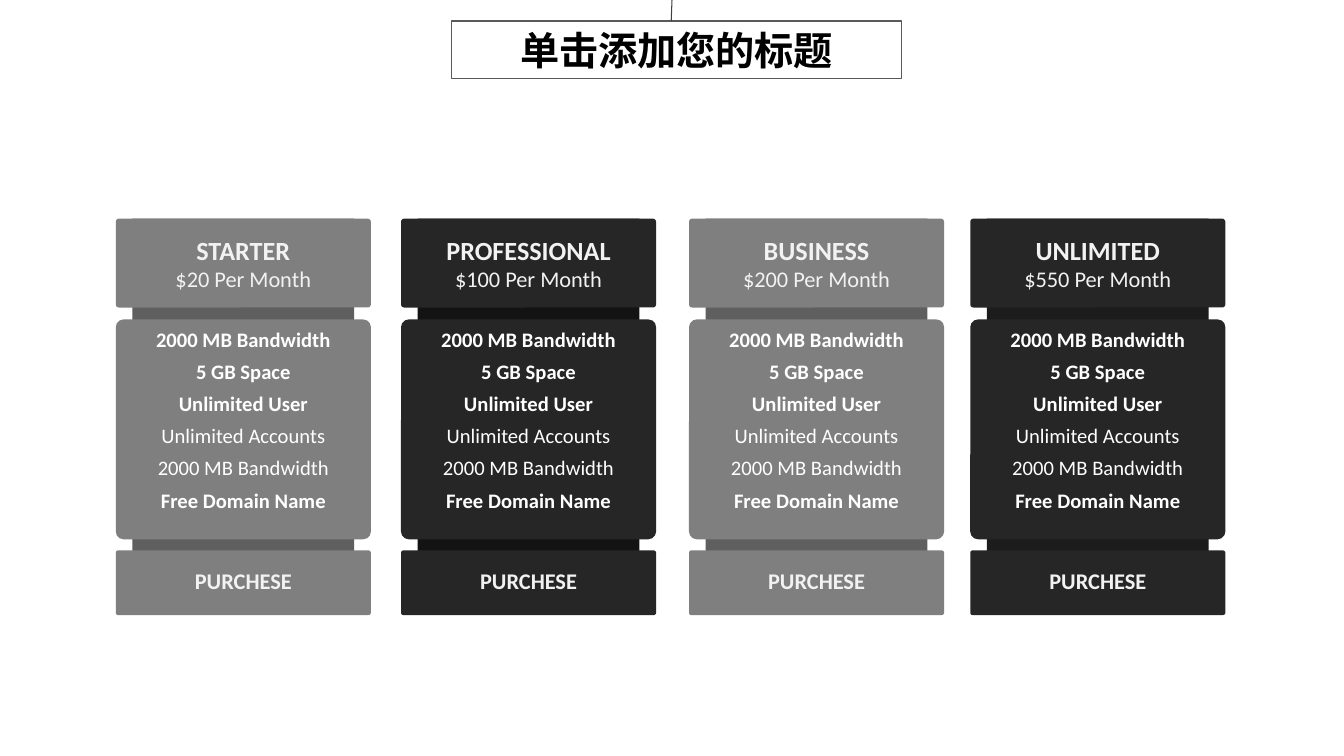
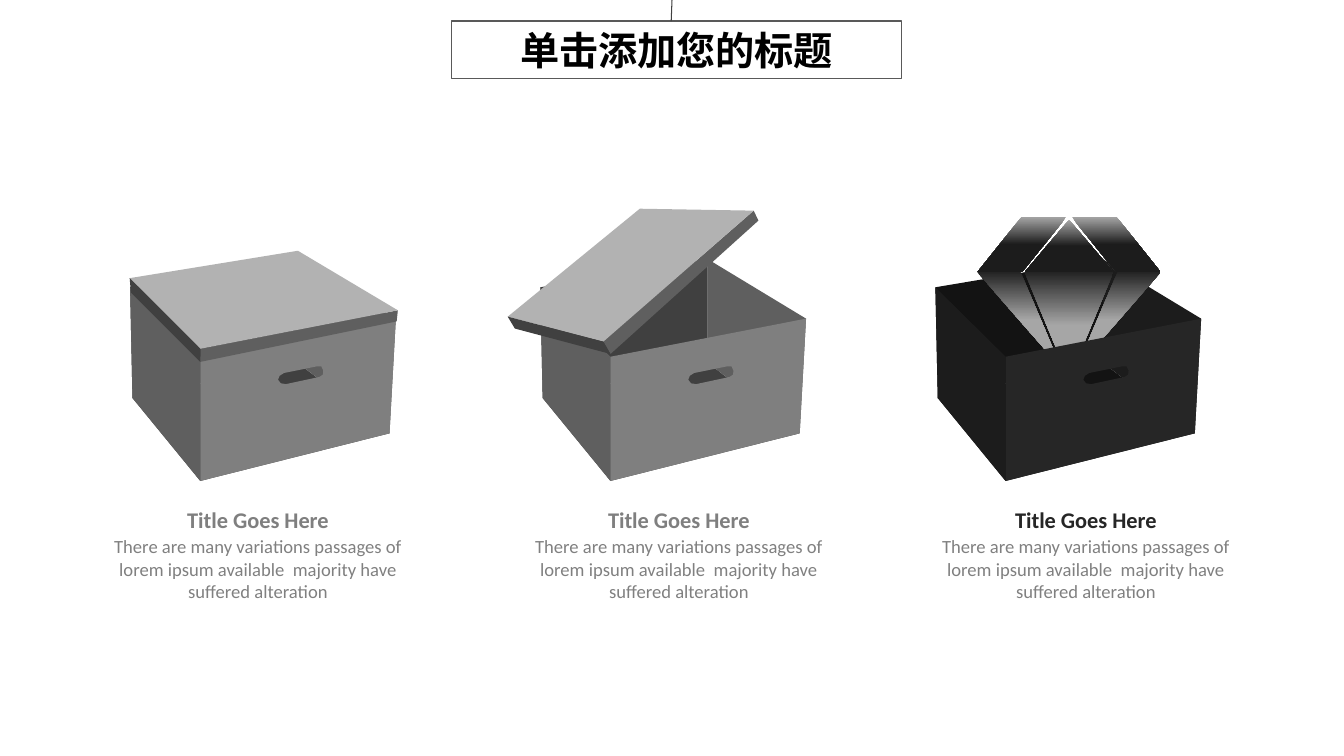
from dataclasses import dataclass

from lxml.etree import SubElement
from pptx import Presentation
from pptx.dml.color import RGBColor as RGB
from pptx.enum.shapes import MSO_CONNECTOR as LINK, MSO_SHAPE as SHAPE
from pptx.enum.text import MSO_ANCHOR as ANCHOR, PP_ALIGN as ALIGN
from pptx.oxml.ns import qn
from pptx.util import Cm, Pt


@dataclass(frozen=True)
class Theme:
    """Colours and type sizes shared by both slides."""
    font: str = "Calibri"
    black: str = "000000"
    white: str = "FFFFFF"
    pale: str = "F2F2F2"
    body: str = "808080"
    lid: str = "B2B2B2"
    frame: str = "595959"
    stem: str = "404040"
    grey: tuple = ("7F7F7F", "5F5F5F", "404040")
    dark: tuple = ("262626", "1C1C1C", "131313")
    crown: tuple = ("A6A6A6", "1C1C1C")
    pavilion: tuple = ("242424", "A6A6A6")
    title_pt: float = 28
    plan_pt: float = 18.7
    label_pt: float = 16
    feature_pt: float = 14.7
    body_pt: float = 13.3


T = Theme()
TITLE = "单击添加您的标题"

COL_W, TOP = 6.43, 5.51
PLANS = [
    (2.92, "STARTER", "$20 Per Month", T.grey[0], T.grey[1]),
    (10.11, "PROFESSIONAL", "$100 Per Month", T.dark[0], T.dark[2]),
    (17.37, "BUSINESS", "$200 Per Month", T.grey[0], T.grey[1]),
    (24.46, "UNLIMITED", "$550 Per Month", T.dark[0], T.dark[1]),
]
FEATURES = [
    ("2000 MB Bandwidth", True),
    ("5 GB Space", True),
    ("Unlimited User", True),
    ("Unlimited Accounts", False),
    ("2000 MB Bandwidth", False),
    ("Free Domain Name", True),
]

CAPTION = "Title Goes Here"
BLURB = ("There are many variations passages of lorem ipsum available  "
         "majority have suffered alteration")
CAPTION_W = 8.43

BACK_TOP, BACK_LOW = (2.45, 6.53), (2.45, 9.14)
LEFT_TOP, LEFT_LOW = (-1.77, 7.24), (-1.71, 10.03)
FRONT_TOP, FRONT_LOW = (0, 8.99), (0, 12.12)
RIGHT_TOP, RIGHT_LOW = (4.93, 8.03), (4.77, 10.92)
HANDLE = [(3.05, 9.23), (2.95, 9.23), (2.11, 9.4), (2, 9.47), (1.96, 9.57),
          (2.03, 9.66), (2.16, 9.68), (3, 9.5), (3.09, 9.44), (3.1, 9.34)]
CLOSED_LID = [(2.46, 6.32), (4.98, 7.82), (0, 8.79), (-1.78, 7.01),
              (4.95, 8.1), (0, 9.12), (-1.75, 7.37)]
OPEN_LID = [(0.74, 5.26), (3.61, 5.31), (-0.18, 8.61), (-2.59, 7.98),
            (3.73, 5.56), (0, 8.92), (-2.41, 8.28)]

CROWN_SIDE = [(0.18, 5.61), (0.08, 5.46), (1.19, 5.46), (2.31, 6.86), (1.19, 6.86)]
CROWN_MIDDLE = [(-1.12, 6.86), (1.12, 6.86), (0, 5.54)]
PAVILION_SIDE = [(2.31, 6.86), (0.2, 9.27), (1.22, 6.86)]
PAVILION_MIDDLE = [(-1.12, 6.86), (1.12, 6.86), (0, 9.55)]


def paint(sp, fill=None, line=None):
    """Give a shape a flat fill and outline, or none, and no shadow."""
    sp.shadow.inherit = False
    if fill:
        sp.fill.solid()
        sp.fill.fore_color.rgb = RGB.from_string(fill)
    else:
        sp.fill.background()
    if line:
        sp.line.color.rgb = RGB.from_string(line)
        sp.line.width = Pt(0.75)
    else:
        sp.line.fill.background()
    return sp


def write(sp, lines, color, anchor=ANCHOR.MIDDLE, top=0, bottom=0, gap=0):
    """Write centred (text, size, bold) lines into a shape."""
    tf = sp.text_frame
    tf.word_wrap = True
    tf.vertical_anchor = anchor
    tf.margin_left = tf.margin_right = 0
    tf.margin_top, tf.margin_bottom = Cm(top), Cm(bottom)
    for i, (text, size, bold) in enumerate(lines):
        p = tf.add_paragraph() if i else tf.paragraphs[0]
        p.text = text
        p.alignment = ALIGN.CENTER
        p.space_before = Pt(gap if i else 0)
        p.font.name = T.font
        p.font.size = Pt(size)
        p.font.bold = bold
        p.font.color.rgb = RGB.from_string(color)


def block(s, kind, x, y, w, h, fill=None, line=None):
    """Add a preset shape measured in centimetres."""
    return paint(s.shapes.add_shape(kind, Cm(x), Cm(y), Cm(w), Cm(h)), fill, line)


def panel(s, x, y, h, fill):
    """Add one slightly rounded panel of a price column."""
    sp = block(s, SHAPE.ROUNDED_RECTANGLE, x, y, COL_W, h, fill)
    sp.adjustments[0] = 0.035
    return sp


def label(s, x, y, w, h, text, size, bold, color):
    """Add a text box with one centred paragraph."""
    tb = s.shapes.add_textbox(Cm(x), Cm(y), Cm(w), Cm(h))
    write(tb, [(text, size, bold)], color, ANCHOR.TOP)


def outline(s, x, *contours, fill=None):
    """Add a freeform of closed contours, shifted right by x."""
    first, *others = [[(Cm(x + px), Cm(py)) for px, py in c] for c in contours]
    fb = s.shapes.build_freeform(*first[0], scale=1.0)
    fb.add_line_segments(first[1:], close=True)
    for points in others:
        fb.move_to(*points[0])
        fb.add_line_segments(points[1:], close=True)
    return paint(fb.convert_to_shape(), fill)


def facet(s, x, points, colors):
    """Add a facet that fades downward and settles at half height."""
    sp = outline(s, x, points)
    sp.fill.gradient()
    sp.fill.gradient_angle = 270
    for stop, color, position in zip(sp.fill.gradient_stops, colors, (0, 0.5)):
        stop.color.rgb = RGB.from_string(color)
        stop.position = position


def diamond(s, x):
    """Draw a gem whose sides mirror each other about x."""
    for side, middle, colors in ((CROWN_SIDE, CROWN_MIDDLE, T.crown),
                                 (PAVILION_SIDE, PAVILION_MIDDLE, T.pavilion)):
        facet(s, x, [(-px, py) for px, py in side], colors)
        facet(s, x, middle, colors)
        facet(s, x, side, colors)


def box_inside(s, x, tones):
    """Draw the floor and the two far walls of a box."""
    _, shade, deep = tones
    outline(s, x, [LEFT_LOW, BACK_LOW, RIGHT_LOW, FRONT_LOW], fill=deep)
    outline(s, x, [BACK_TOP, RIGHT_TOP, RIGHT_LOW, BACK_LOW], fill=shade)
    outline(s, x, [LEFT_TOP, BACK_TOP, BACK_LOW, LEFT_LOW], fill=deep)


def box_outside(s, x, tones):
    """Draw the near side and the front with its handle hole."""
    face, shade, _ = tones
    outline(s, x, [LEFT_TOP, FRONT_TOP, FRONT_LOW, LEFT_LOW], fill=shade)
    outline(s, x, [FRONT_LOW, FRONT_TOP, RIGHT_TOP, RIGHT_LOW], HANDLE, fill=face)


def lid(s, x, corners):
    """Draw a lid from its top corners and lower edge."""
    back, right, front, left, right_low, front_low, left_low = corners
    outline(s, x, [right, right_low, front_low, front], fill=T.grey[1])
    outline(s, x, [back, right, front, left], fill=T.lid)
    outline(s, x, [front, front_low, left_low, left], fill=T.grey[2])


def new_slide(prs):
    """Add a blank slide with the framed title and its stem."""
    s = prs.slides.add_slide(prs.slide_layouts[6])
    sp = block(s, SHAPE.RECTANGLE, 11.38, 0.53, 11.35, 1.45, line=T.frame)
    write(sp, [(TITLE, T.title_pt, True)], T.black)
    stem = s.shapes.add_connector(LINK.STRAIGHT, Cm(16.94), Cm(0), Cm(16.92), Cm(0.53))
    stem.line.color.rgb = RGB.from_string(T.stem)
    stem.line.width = Pt(0.75)
    SubElement(stem._element.spPr, qn("a:effectLst"))
    return s


def price_column(s, x, name, price, fill, backing):
    """Draw one price plan: header, features and button on a backing."""
    block(s, SHAPE.RECTANGLE, x + 0.42, TOP, COL_W - 0.84, 9.98, backing)
    write(panel(s, x, TOP, 2.24, fill),
          [(name, T.plan_pt, True), (price, T.label_pt, False)], T.pale)
    write(panel(s, x, 8.05, 5.54, fill),
          [(text, T.feature_pt, bold) for text, bold in FEATURES],
          T.white, ANCHOR.TOP, top=0.13, gap=5.3)
    write(panel(s, x, 13.87, 1.63, fill),
          [("PURCHESE", T.label_pt, True)], T.pale, bottom=0.13)


def caption(s, x, color):
    """Add the heading and blurb under a box."""
    label(s, x, 12.75, CAPTION_W, 0.69, CAPTION, T.label_pt, True, color)
    label(s, x, 13.49, CAPTION_W, 1.7, BLURB, T.body_pt, False, T.body)


def pricing_slide(prs):
    """Build the slide with four price plans."""
    s = new_slide(prs)
    for plan in PLANS:
        price_column(s, *plan)


def boxes_slide(prs):
    """Build the slide with a closed, an opening and a full box."""
    s = new_slide(prs)
    for x, text_x, tones, corners in ((5.05, 2.29, T.grey, CLOSED_LID),
                                      (15.39, 12.9, T.grey, OPEN_LID),
                                      (25.35, 23.16, T.dark, None)):
        box_inside(s, x, tones)
        if not corners:
            diamond(s, x + 1.6)
        box_outside(s, x, tones)
        if corners:
            lid(s, x, corners)
        caption(s, text_x, tones[0])


def main():
    """Build and save the presentation."""
    prs = Presentation()
    prs.slide_width, prs.slide_height = Cm(33.88), Cm(19.05)
    pricing_slide(prs)
    boxes_slide(prs)
    prs.save("out.pptx")


if __name__ == "__main__":
    main()
